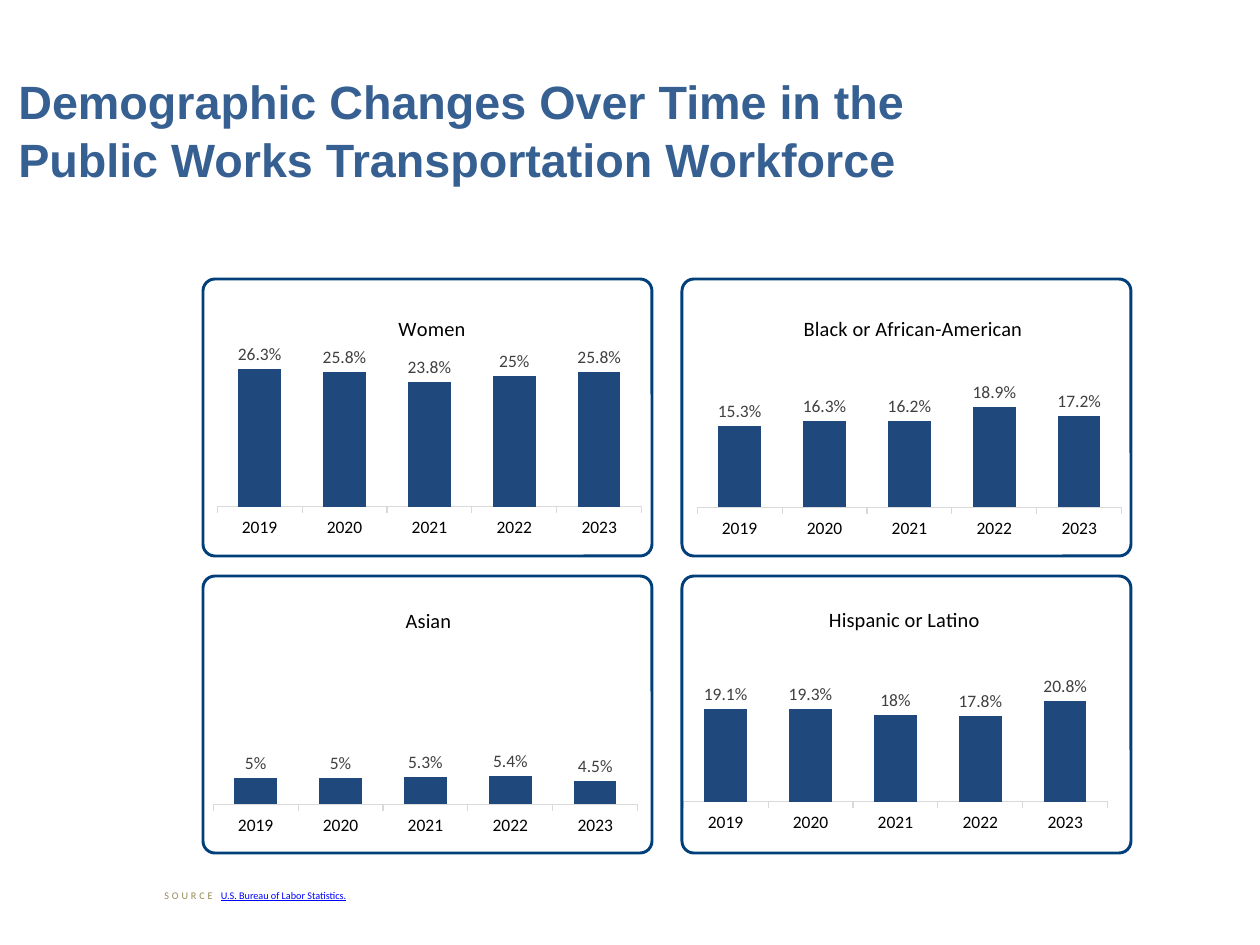
from dataclasses import dataclass

from lxml import etree
from pptx import Presentation
from pptx.chart.data import CategoryChartData
from pptx.dml.color import RGBColor
from pptx.enum.chart import XL_CHART_TYPE, XL_LABEL_POSITION, XL_TICK_MARK
from pptx.enum.shapes import MSO_SHAPE
from pptx.enum.text import MSO_ANCHOR
from pptx.oxml.ns import qn
from pptx.util import Pt

PX_PER_INCH = 105
COLUMN = XL_CHART_TYPE.COLUMN_CLUSTERED
OUTSIDE_END = XL_LABEL_POSITION.OUTSIDE_END
TICK_OUT = XL_TICK_MARK.OUTSIDE
ROUNDED = MSO_SHAPE.ROUNDED_RECTANGLE
MIDDLE = MSO_ANCHOR.MIDDLE

YEARS = ["2019", "2020", "2021", "2022", "2023"]
FRAME_W, FRAME_H = 449, 277
FRAME_LEFTS = (203, 682)
FRAME_TOPS = (279, 576)
CHART_W = 445


@dataclass
class GroupChart:
    title: str
    values: list[float]
    left: int
    top: int
    height: int
    title_left: int
    title_top: int
    plot_y: float
    plot_h: float


GROUPS = [
    GroupChart("Women", [26.3, 25.8, 23.8, 25, 25.8],
               207, 295, 255, 188, 16, 0.01, 0.82),
    GroupChart("Black or African-American", [15.3, 16.3, 16.2, 18.9, 17.2],
               687, 295, 256, 113, 16, 0, 0.83),
    GroupChart("Asian", [5, 5, 5.3, 5.4, 4.5],
               203, 587, 256, 199, 16, 0.03, 0.82),
    GroupChart("Hispanic or Latino", [19.1, 19.3, 18, 17.8, 20.8],
               673, 576, 272, 152, 26, 0.12, 0.71),
]


def px(n: int) -> int:
    return round(n * 914400 / PX_PER_INCH)


def color(value: str) -> RGBColor:
    return RGBColor.from_string(value)


def style(font, size: float, hex_color: str, name: str = "Calibri", bold: bool = False) -> None:
    font.name, font.size, font.bold = name, Pt(size), bold
    font.color.rgb = color(hex_color)


def set_layout(parent, index: int, **settings) -> None:
    """Give a chart part a manual position at the given child index."""
    for old in parent.findall(qn("c:layout")):
        parent.remove(old)
    layout = etree.Element(qn("c:layout"))
    manual = etree.SubElement(layout, qn("c:manualLayout"))
    for tag, value in settings.items():
        etree.SubElement(manual, qn(f"c:{tag}")).set("val", str(value))
    parent.insert(index, layout)


def add_group_chart(s, group: GroupChart) -> None:
    data = CategoryChartData()
    data.categories = YEARS
    data.add_series("Series 1", group.values)
    chart = s.shapes.add_chart(COLUMN, px(group.left), px(group.top),
                               px(CHART_W), px(group.height), data).chart
    style(chart.font, 10, "000000")
    chart.has_legend = False

    # Title and plot position
    chart.has_title = True
    tf = chart.chart_title.text_frame
    tf.text = group.title
    style(tf.paragraphs[0].runs[0].font, 14, "000000")
    set_layout(chart.element.find(f".//{qn('c:title')}"), 1, xMode="edge", yMode="edge",
               x=round(group.title_left / CHART_W, 3),
               y=round(group.title_top / group.height, 3))
    set_layout(chart.element.find(f".//{qn('c:plotArea')}"), 0, layoutTarget="inner",
               xMode="edge", yMode="edge", x=0.023, y=group.plot_y,
               w=0.954, h=group.plot_h)

    # Axes
    years = chart.category_axis
    years.major_tick_mark = TICK_OUT
    years.format.line.color.rgb = color("D9D9D9")
    years.format.line.width = Pt(0.75)
    style(years.tick_labels.font, 12, "000000")
    share = chart.value_axis
    share.visible = False
    share.has_major_gridlines = False
    share.minimum_scale, share.maximum_scale = 0, 40

    # Columns and their labels
    plot = chart.plots[0]
    plot.gap_width, plot.overlap = 100, -27
    plot.vary_by_categories = False
    fill = plot.series[0].format.fill
    fill.solid()
    fill.fore_color.rgb = color("1F497D")
    plot.has_data_labels = True
    labels = plot.data_labels
    labels.show_value = True
    labels.position = OUTSIDE_END
    labels.number_format = 'General"%"'
    labels.number_format_is_linked = False
    style(labels.font, 12, "404040")


def add_frame(s, left: int, top: int) -> None:
    frame = s.shapes.add_shape(ROUNDED, px(left), px(top), px(FRAME_W), px(FRAME_H))
    frame.adjustments[0] = 0.043
    frame.shadow.inherit = False
    frame.fill.background()
    frame.line.color.rgb = color("003F7A")
    frame.line.width = Pt(2)


def add_text_box(s, left: int, top: int, width: int, height: int):
    tf = s.shapes.add_textbox(px(left), px(top), px(width), px(height)).text_frame
    tf.word_wrap = True
    return tf


def main() -> None:
    prs = Presentation()
    prs.slide_width, prs.slide_height = px(1260), px(945)
    s = prs.slides.add_slide(prs.slide_layouts[6])

    # Heading
    tf = add_text_box(s, 8, 34, 945, 189)
    tf.vertical_anchor = MIDDLE
    tf.text = "Demographic Changes Over Time in the Public Works Transportation Workforce"
    p = tf.paragraphs[0]
    p.line_spacing = 1.05
    style(p.runs[0].font, 32, "376092", "Arial", True)

    # Charts, then the frames around them
    for group in GROUPS:
        add_group_chart(s, group)
    for top in FRAME_TOPS:
        for left in FRAME_LEFTS:
            add_frame(s, left, top)

    # Source line
    p = add_text_box(s, 154, 884, 881, 23).paragraphs[0]
    r = p.add_run()
    r.text = "SOURCE "
    style(r.font, 7, "948A54")
    r.font._element.set("spc", "200")
    r = p.add_run()
    r.text = "U.S. Bureau of Labor Statistics."
    style(r.font, 7, "0000FF")
    r.font.underline = True

    prs.save("out.pptx")


if __name__ == "__main__":
    main()
